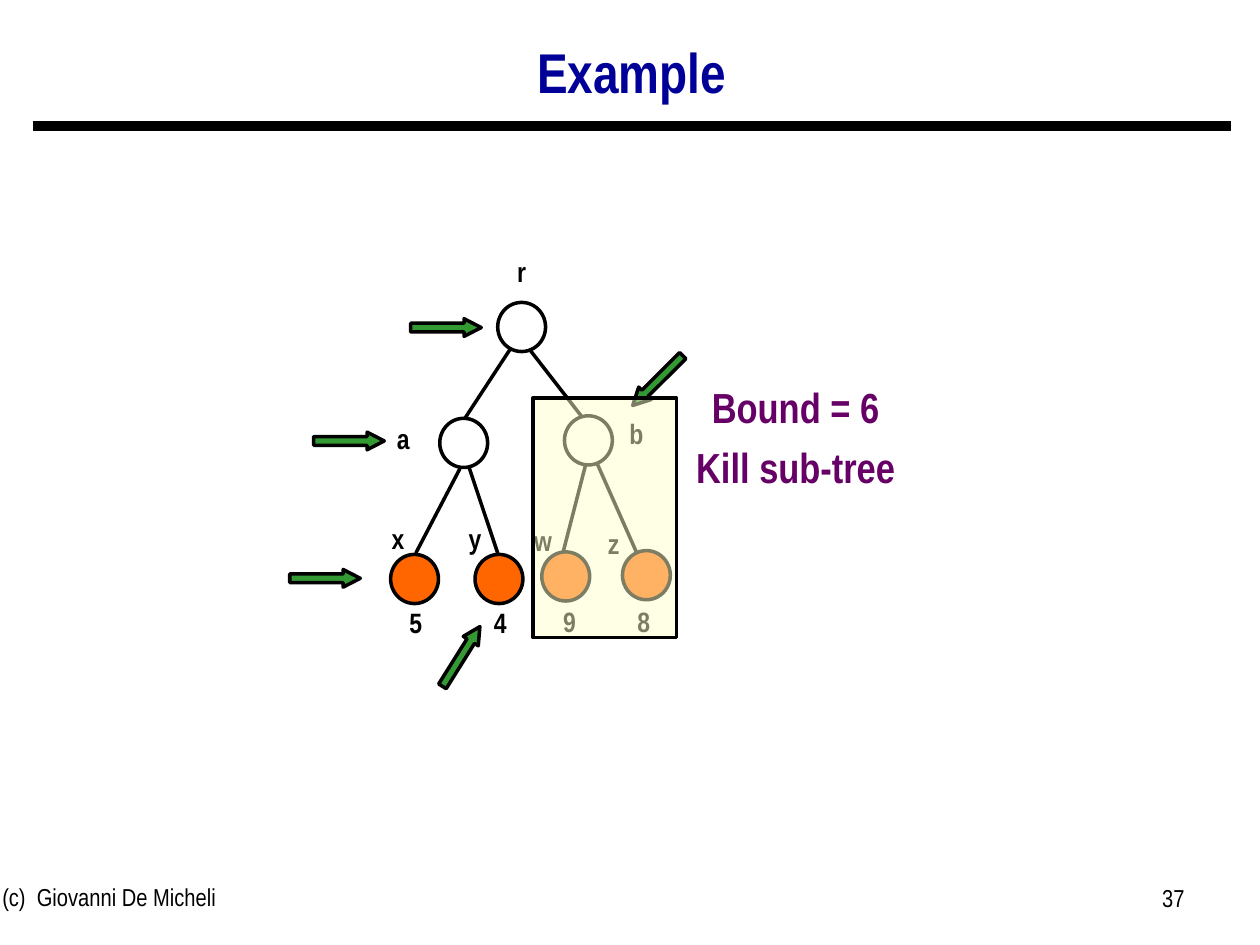
from collections import namedtuple

from lxml import etree
from pptx import Presentation
from pptx import util as u
from pptx.dml.color import RGBColor
from pptx.enum import shapes, text
from pptx.oxml import ns

BLACK = RGBColor(0x00, 0x00, 0x00)
NAVY = RGBColor(0x00, 0x00, 0x99)
PURPLE = RGBColor(0x66, 0x00, 0x66)
ORANGE = RGBColor(0xFF, 0x66, 0x00)
GREEN = RGBColor(0x33, 0x99, 0x33)
CREAM = RGBColor(0xFF, 0xFF, 0xCC)
FONT = "Arial Narrow"
SHAPE = shapes.MSO_SHAPE
CENTER = text.PP_ALIGN.CENTER

Box = namedtuple("Box", "left top width height")

NODE_SIZE = 0.38, 0.39
LABEL_SIZE = 0.9, 0.37
ARROW_SIZE = 0.56, 0.14
INNER_NODES = [(1.95, 0.4), (1.49, 1.32), (2.48, 1.3)]
LEAVES = [(1.1, 2.4), (1.77, 2.4), (2.3, 2.38), (2.94, 2.37)]
EDGES = [
    (2.05, 0.77, 1.69, 1.32),
    (2.2, 0.77, 2.62, 1.31),
    (1.65, 1.72, 1.3, 2.39),
    (1.72, 1.7, 1.95, 2.39),
    (2.65, 1.68, 2.47, 2.38),
    (2.74, 1.68, 3.05, 2.38),
]
LABELS = [
    ("r", 1.69, -0.03), ("a", 0.75, 1.3), ("b", 2.6, 1.26),
    ("x", 0.71, 2.09), ("y", 1.32, 2.09), ("w", 1.86, 2.11), ("z", 2.42, 2.13),
    ("5", 0.85, 2.76), ("4", 1.52, 2.76), ("9", 2.07, 2.75), ("8", 2.66, 2.75),
]
ARROWS = [
    (1.26, 0.53, 0), (0.49, 1.43, 0), (0.3, 2.52, 0),
    (1.38, 3.14, 302.1), (2.94, 0.95, 135.1),
]


def inches(values):
    """Convert numbers to lengths in inches."""
    return [u.Inches(value) for value in values]


def within(box, left, top, size):
    """Return a box of the given size, offset from the corner of another."""
    return Box(box.left + left, box.top + top, *size)


def add_text(slide, box, lines, size, color=BLACK, bold=False,
             anchor=text.MSO_ANCHOR.TOP, **paragraph_format):
    """Add a text box with one paragraph for each line."""
    frame = slide.shapes.add_textbox(*inches(box)).text_frame
    frame.word_wrap = True
    frame.vertical_anchor = anchor
    frame.text = "\n".join(lines)
    font_format = {"name": FONT, "size": u.Pt(size), "bold": bold}
    for paragraph in frame.paragraphs:
        for name, value in paragraph_format.items():
            setattr(paragraph, name, value)
        for name, value in font_format.items():
            setattr(paragraph.runs[0].font, name, value)
        paragraph.runs[0].font.color.rgb = color
    return frame


def add_line(slide, ends, width=2):
    """Add a black straight connector."""
    line = slide.shapes.add_connector(
        shapes.MSO_CONNECTOR.STRAIGHT, *inches(ends))
    line.line.color.rgb = BLACK
    line.line.width = u.Pt(width)
    etree.SubElement(line._element.spPr, ns.qn("a:effectLst"))


def add_outlined(slide, kind, box, fill=None):
    """Add a black-outlined preset shape, filled if a colour is given."""
    shape = slide.shapes.add_shape(kind, *inches(box))
    shape.shadow.inherit = False
    shape.line.color.rgb = BLACK
    shape.line.width = u.Pt(2)
    if fill is None:
        shape.fill.background()
    else:
        shape.fill.solid()
        shape.fill.fore_color.rgb = fill
    return shape


def add_header(slide, box):
    """Add the title and the thick rule below it."""
    add_text(slide, box, ["Example"], 32, NAVY, True, text.MSO_ANCHOR.MIDDLE,
             alignment=CENTER, line_spacing=0.9)
    rule_top = box.top + box.height + 0.03
    add_line(slide, (box.left, rule_top, box.left + box.width, rule_top), 6)


def add_footer(slide, box):
    """Add the author and the slide number at the two ends."""
    add_text(slide, within(box, 0, 0, (3.17, box.height)),
             ["(c)  Giovanni De Micheli"], 14)
    add_text(slide, within(box, box.width - 2.33, 0.01, (2.33, box.height)),
             ["37"], 14, alignment=text.PP_ALIGN.RIGHT)


def add_tree(slide, box):
    """Add the edges, nodes, labels and pointing arrows of the search tree."""
    for x1, y1, x2, y2 in EDGES:
        add_line(slide, (box.left + x1, box.top + y1,
                         box.left + x2, box.top + y2))
    for nodes, fill in ((INNER_NODES, None), (LEAVES, ORANGE)):
        for left, top in nodes:
            add_outlined(slide, SHAPE.OVAL,
                         within(box, left, top, NODE_SIZE), fill)
    for label, left, top in LABELS:
        add_text(slide, within(box, left, top, LABEL_SIZE), [label], 16,
                 bold=True, alignment=CENTER)
    for left, top, rotation in ARROWS:
        arrow = add_outlined(slide, SHAPE.RIGHT_ARROW,
                             within(box, left, top, ARROW_SIZE), GREEN)
        arrow.adjustments[1] = 0.97
        arrow.rotation = rotation


def add_bound_note(slide, box):
    """Add the note on the bound that prunes the sub-tree."""
    frame = add_text(slide, box, ["Bound = 6", "Kill sub-tree"], 24, PURPLE,
                     True, alignment=CENTER, line_spacing=0.75)
    frame.paragraphs[1].space_before = u.Pt(13)


def add_pruned_cover(slide, box):
    """Cover the pruned sub-tree with a translucent rectangle."""
    cover = add_outlined(slide, SHAPE.RECTANGLE, box, CREAM)
    color = cover._element.spPr.find(ns.qn("a:solidFill"))[0]
    etree.SubElement(color, ns.qn("a:alpha"), val="49000")


def main():
    """Build the slide and save it."""
    presentation = Presentation()
    presentation.slide_width, presentation.slide_height = inches((10, 7.5))
    slide = presentation.slides.add_slide(presentation.slide_layouts[6])
    add_header(slide, Box(0.26, 0.22, 9.51, 0.75))
    add_footer(slide, Box(-0.08, 6.95, 9.58, 0.52))
    add_tree(slide, Box(2, 2, 3.5, 3.5))
    add_bound_note(slide, Box(5.03, 3.07, 2.57, 0.9))
    add_pruned_cover(slide, Box(4.23, 3.16, 1.14, 1.9))
    presentation.save("out.pptx")


if __name__ == "__main__":
    main()
